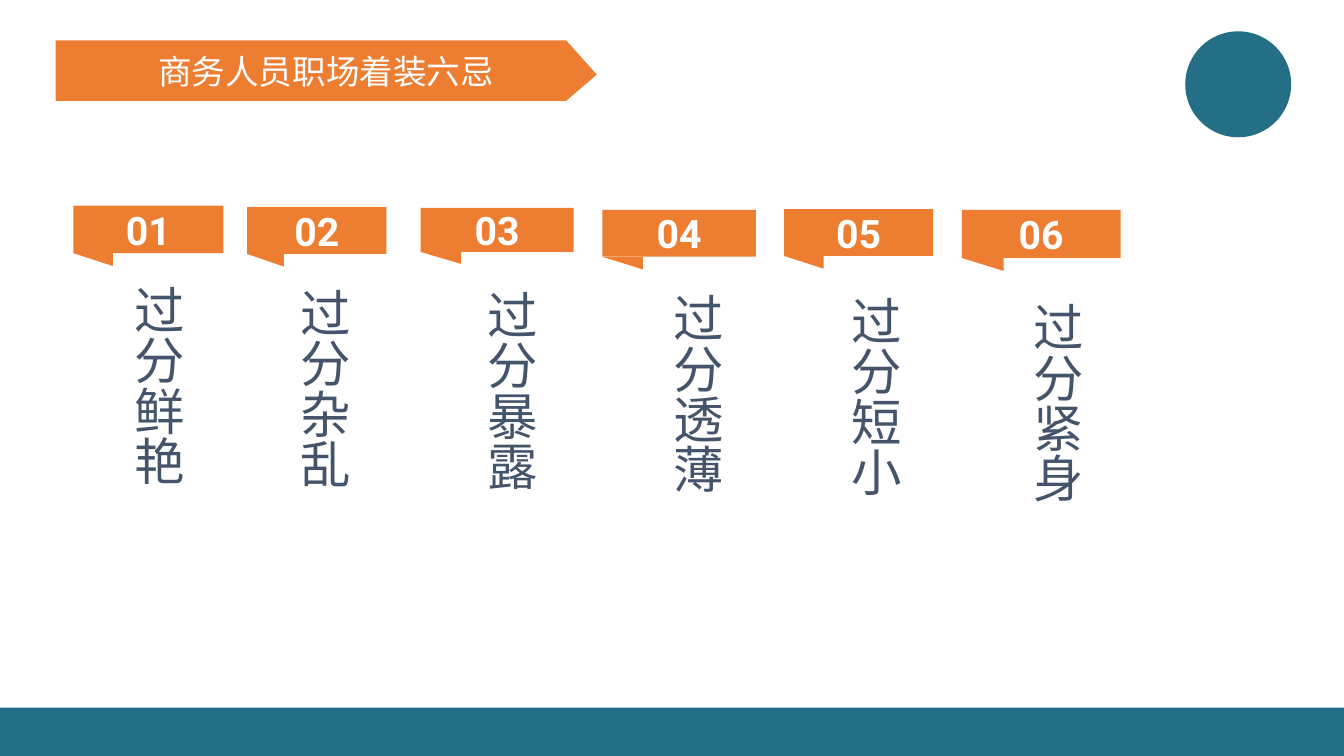
from pptx import Presentation
from pptx.dml.color import RGBColor
from pptx.enum.shapes import MSO_SHAPE as Shape
from pptx.enum.text import MSO_ANCHOR as Anchor, MSO_AUTO_SIZE as Fit, PP_ALIGN as Align
from pptx.oxml.ns import qn
from pptx.util import Cm, Pt

ORANGE = RGBColor(0xED, 0x7D, 0x31)
TEAL = RGBColor(0x24, 0x6F, 0x86)
SLATE = RGBColor(0x44, 0x54, 0x6A)
WHITE = RGBColor(0xFF, 0xFF, 0xFF)

# Ribbon box, then left, top and height of the upright label, in cm
TABOOS = [
    ("过分鲜艳", (1.85, 5.18, 3.78, 1.2), (2.84, 6.93, 5.77)),
    ("过分杂乱", (6.23, 5.22, 3.51, 1.18), (7.01, 7.01, 5.92)),
    ("过分暴露", (10.6, 5.24, 3.86, 1.11), (11.73, 7.06, 6.1)),
    ("过分透薄", (15.18, 5.29, 3.87, 1.18), (16.41, 7.14, 6.05)),
    ("过分短小", (19.76, 5.27, 3.76, 1.18), (20.9, 7.21, 5.94)),
    ("过分紧身", (24.24, 5.29, 4, 1.21), (25.48, 7.37, 5.87)),
]


def write(frame, text, font="Arial", size=36, color=SLATE, bold=False,
          align=Align.LEFT, anchor=Anchor.TOP):
    frame.word_wrap = True
    frame.auto_size = Fit.NONE
    frame.vertical_anchor = anchor
    para = frame.paragraphs[0]
    para.alignment = align
    run = para.add_run()
    run.text = text
    run.font.name = font
    run.font.size = Pt(size)
    run.font.bold = bold
    run.font.color.rgb = color
    east = run.font._element.makeelement(qn("a:ea"), {"typeface": "Noto Sans CJK SC"})
    run.font._element.find(qn("a:latin")).addnext(east)


class Deck:
    """Holds the style and the current slide."""

    def __init__(self):
        self.pres = Presentation()
        self.pres.slide_width = Cm(33.87)
        self.pres.slide_height = Cm(19.05)
        self.slide = self.pres.slides.add_slide(self.pres.slide_layouts[5])
        self.shapes = self.slide.shapes

    def paint(self, shape, color):
        shape.shadow.inherit = False
        shape.fill.solid()
        shape.fill.fore_color.rgb = color
        shape.line.fill.background()
        return shape

    def block(self, kind, box, color, home=None):
        home = home or self.shapes
        return self.paint(home.add_shape(kind, *map(Cm, box)), color)

    def outline(self, points, color, home=None):
        first, *rest = [(Cm(x), Cm(y)) for x, y in points]
        path = (home or self.shapes).build_freeform(*first)
        path.add_line_segments(rest, close=True)
        return self.paint(path.convert_to_shape(), color)

    def title(self, text, left, top, width, height, tip):
        right, foot = left + width, top + height
        self.outline([(left, top), (right - tip, top), (right, top + 0.86),
                      (right - tip, foot), (left, foot)], ORANGE)
        head = self.shapes.title
        head.left, head.top, head.width, head.height = map(Cm, (left, top, width, height))
        self.shapes._spTree.append(head._element)  # bring the title above its banner
        write(head.text_frame, text, font="Noto Sans CJK SC", size=24, color=WHITE,
              align=Align.CENTER, anchor=Anchor.MIDDLE)

    def ribbon(self, text, box):
        """Numbered bar with a folded corner under its left end."""
        left, top, width, height = box
        home = self.shapes.add_group_shape().shapes
        foot, fold = top + height, left + 0.264 * width
        self.outline([(left, foot), (fold, foot), (fold, foot + 0.27 * height)],
                     ORANGE, home)
        bar = self.block(Shape.RECTANGLE, box, ORANGE, home)
        write(bar.text_frame, text, font="Roboto", size=28, color=WHITE, bold=True,
              align=Align.CENTER, anchor=Anchor.MIDDLE)

    def label(self, text, left, top, height):
        """Text set in an upright column."""
        box = self.shapes.add_textbox(Cm(left), Cm(top), Cm(2.03), Cm(height))
        write(box.text_frame, text)
        box.text_frame._txBody.bodyPr.set("vert", "eaVert")


def main():
    deck = Deck()
    deck.block(Shape.OVAL, (29.87, 0.79, 2.67, 2.67), TEAL)
    deck.block(Shape.RECTANGLE, (0, 17.83, 33.87, 1.22), TEAL)
    deck.title("商务人员职场着装六忌", 1.4, 1.02, 13.64, 1.52, tip=0.77)
    for num, (text, box, spot) in enumerate(TABOOS, 1):
        deck.ribbon(f"{num:02}", box)
        deck.label(text, *spot)
    deck.pres.save("out.pptx")


if __name__ == "__main__":
    main()
